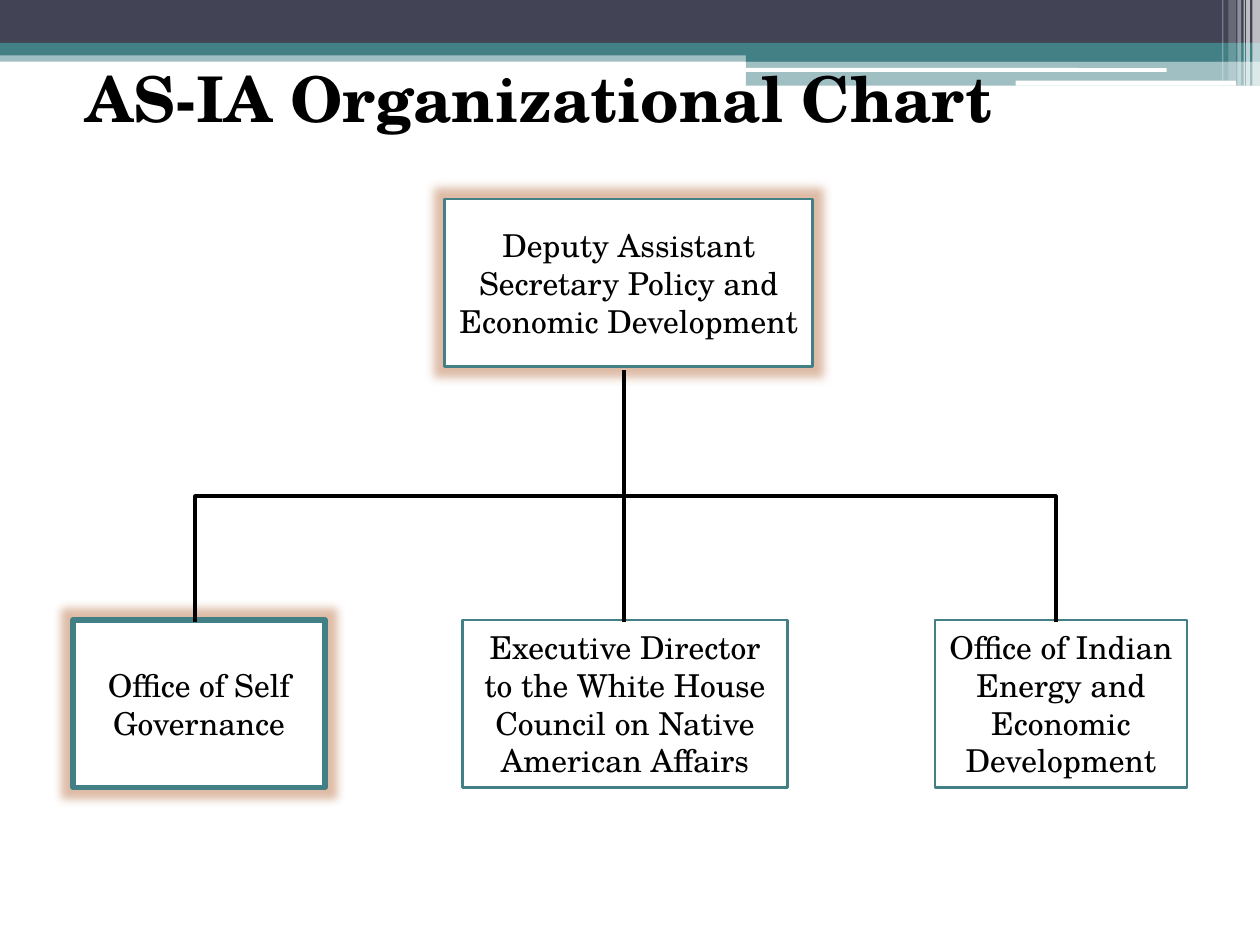
from lxml import etree
from pptx import Presentation
from pptx.dml.color import RGBColor
from pptx.enum.shapes import MSO_CONNECTOR as CONN, MSO_SHAPE as SHAPE
from pptx.enum.text import MSO_ANCHOR as ANCHOR, PP_ALIGN as ALIGN
from pptx.oxml.ns import qn
from pptx.util import Inches, Pt

COLORS = {"navy": "424456", "teal": "438086", "white": "FFFFFF",
          "black": "000000", "glow": "AC5520"}
FONT = "TeX Gyre Schola"


def rgb(name):
    return RGBColor.from_string(COLORS[name])


def add_alpha(color, percent):
    etree.SubElement(color, qn("a:alpha"), val=str(percent * 1000))


def add_glow(sp, radius=0.15, percent=40):
    effects = sp._element.spPr.find(qn("a:effectLst"))
    glow = etree.SubElement(effects, qn("a:glow"), rad=str(Inches(radius)))
    add_alpha(etree.SubElement(glow, qn("a:srgbClr"), val=COLORS["glow"]), percent)


def add_box(s, box, fill, kind=SHAPE.RECTANGLE, alpha=None, line=None, width=1.5):
    sp = s.shapes.add_shape(kind, *map(Inches, box))
    sp.shadow.inherit = False
    sp.fill.solid()
    sp.fill.fore_color.rgb = rgb(fill)
    if alpha:
        add_alpha(sp._element.spPr.find(qn("a:solidFill"))[0], alpha)
    if line:
        sp.line.color.rgb = rgb(line)
        sp.line.width = Pt(width)
    else:
        sp.line.fill.background()
    return sp


def write_text(tf, text, size=18, bold=False, color="black", anchor=ANCHOR.MIDDLE):
    tf.word_wrap = True
    tf.vertical_anchor = anchor
    p = tf.paragraphs[0]
    p.alignment = ALIGN.CENTER
    r = p.add_run()
    r.text = text
    r.font.name, r.font.size, r.font.bold = FONT, Pt(size), bold
    r.font.color.rgb = rgb(color)


def add_header(s, x, y, w):
    right = x + w
    bands = [(x, 0.4, w, 0.09, "teal", 50), (x, 0, w, 0.34, "navy", None),
             (x, 0.34, w, 0.1, "teal", None),
             (right - 4.08, 0.39, 4.08, 0.1, "teal", None),
             (right - 4.08, 0.48, 4.08, 0.2, "teal", 50)]
    for left, top, width, height, fill, alpha in bands:
        add_box(s, (left, y + top, width, height), fill, alpha=alpha)
    for inset, top, width, height in [(4.09, 0.54, 3.35, 0.03), (1.94, 0.64, 1.75, 0.04)]:
        add_box(s, (right - inset, y + top, width, height), "white", SHAPE.ROUNDED_RECTANGLE)
    stripes = [(0.06, 0.06, 0.68, 65), (0.11, 0.03, 0.68, 65), (0.13, 0.01, 0.68, 60),
               (0.18, 0.03, 0.68, 40), (0.25, 0.06, 0.64, 20), (0.3, 0.01, 0.64, 30)]
    for inset, width, height, alpha in stripes:
        add_box(s, (right - inset, y, width, height), "white", alpha=alpha)


def add_office(s, box, text, glow=False, width=1.5):
    sp = add_box(s, box, "white", SHAPE.FLOWCHART_PROCESS, line="teal", width=width)
    if glow:
        add_glow(sp)
    write_text(sp.text_frame, text)


def add_branch(s, x1, y1, x2, y2):
    mid_x, mid_y = (x1 + x2) / 2, (y1 + y2) / 2
    half_w, half_h = (y2 - y1) / 2, abs(x2 - x1) / 2
    side, angle = (1, 90) if x2 < x1 else (-1, 270)
    c = s.shapes.add_connector(
        CONN.ELBOW, Inches(mid_x - side * half_w), Inches(mid_y - half_h),
        Inches(mid_x + side * half_w), Inches(mid_y + half_h))
    c.line.color.rgb = rgb("black")
    c.line.width = Pt(2.25)
    spPr = c._element.spPr
    spPr.find(qn("a:xfrm")).set("rot", str(angle * 60000))
    etree.SubElement(spPr, qn("a:effectLst"))


def add_org_chart(s, x, y):
    height, row_y = 1.33, y + 3.34
    add_office(s, (x + 2.95, y, 2.92, height),
               "Deputy Assistant Secretary Policy and Economic Development", glow=True)
    offices = [
        (0, 2, "Office of Self Governance", True, 3),
        (3.09, 2.58, "Executive Director to the White House Council on Native American Affairs",
         False, 1.5),
        (6.84, 2, "Office of Indian Energy and Economic Development", False, 1.5)]
    for left, width, text, glow, line in offices:
        add_office(s, (x + left, row_y, width, height), text, glow, line)
    for target in (4.37, 7.8, 0.97):
        add_branch(s, x + 4.37, y + 1.36, x + target, row_y + 0.02)


def add_title(s, box, text):
    tb = s.shapes.add_textbox(*map(Inches, box))
    write_text(tb.text_frame, text, size=36, bold=True, anchor=ANCHOR.TOP)


def main():
    prs = Presentation()
    prs.slide_width, prs.slide_height = Inches(10), Inches(7.5)
    s = prs.slides.add_slide(prs.slide_layouts[6])
    add_header(s, 0, 0, 10)
    add_org_chart(s, 0.58, 1.58)
    add_title(s, (-0.02, 0.42, 8.6, 0.71), "AS-IA Organizational Chart")
    prs.save("out.pptx")


if __name__ == "__main__":
    main()
